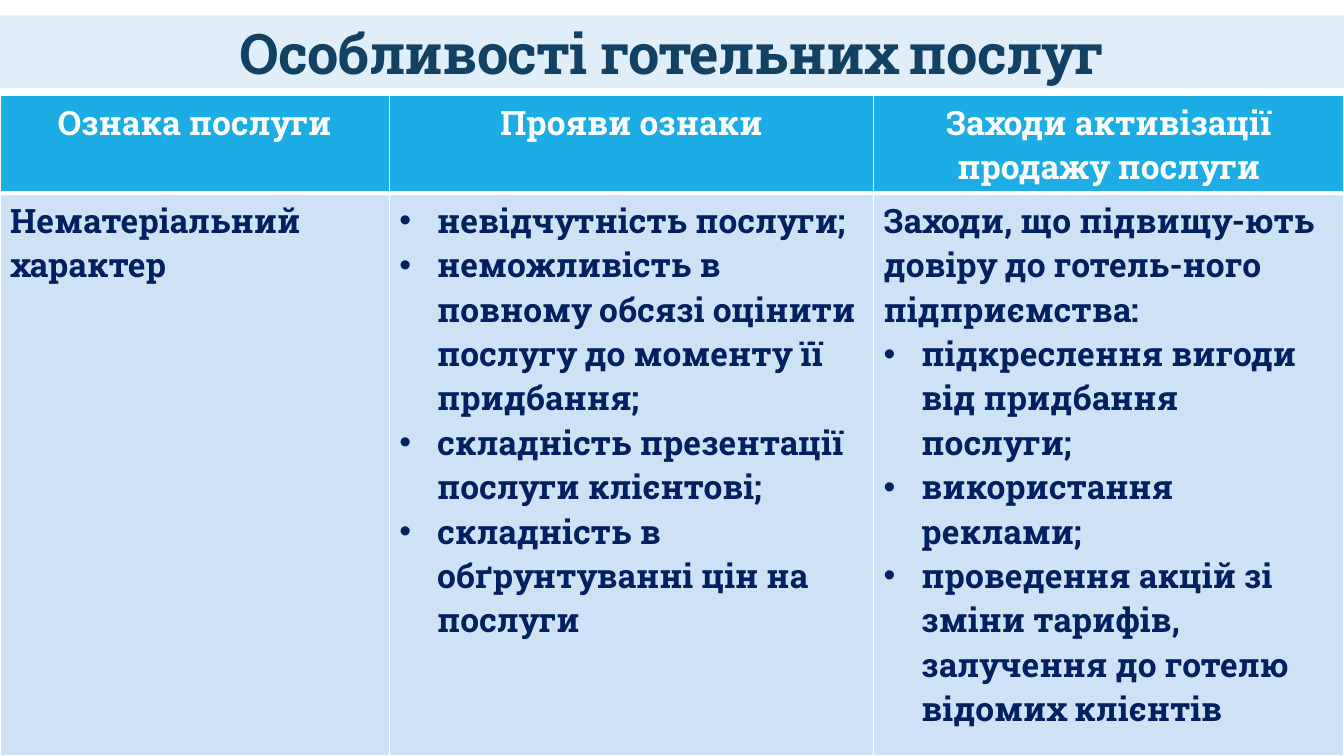
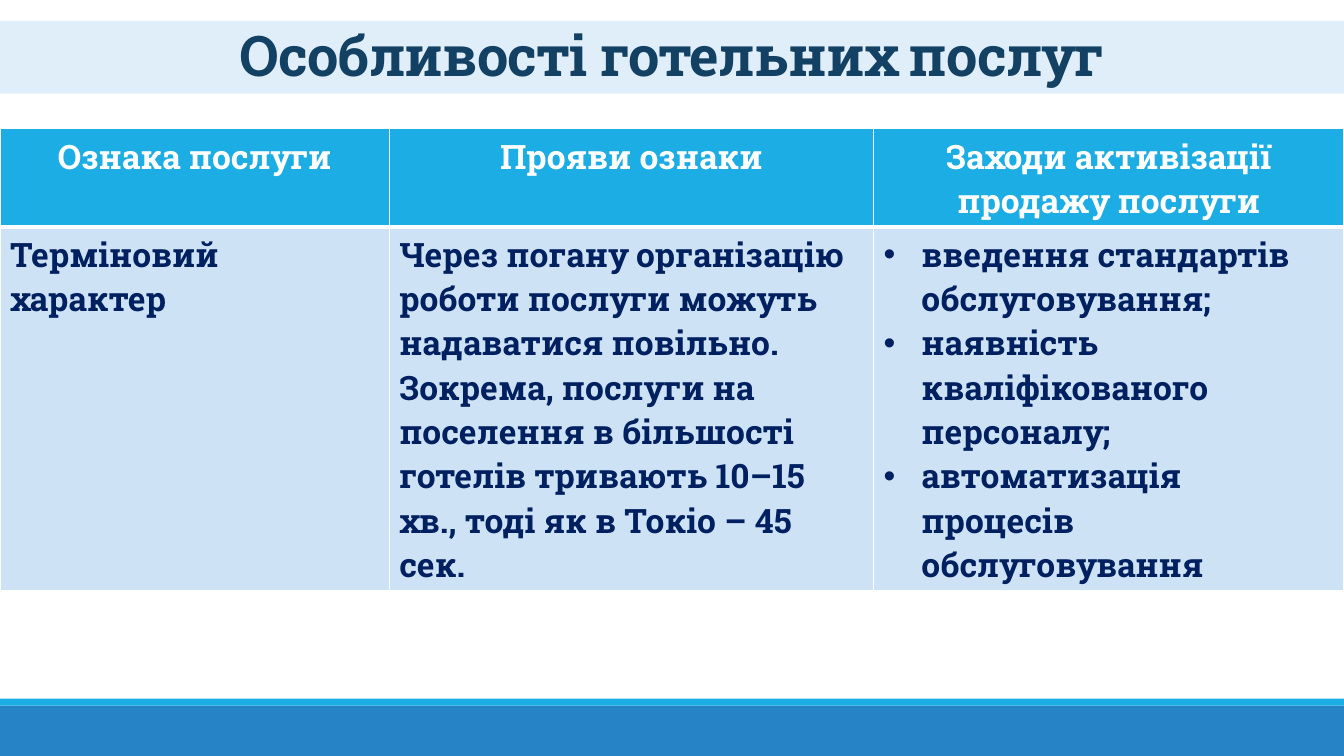
from dataclasses import dataclass

from lxml import etree
from pptx import Presentation
from pptx.dml.color import RGBColor
from pptx.enum import shapes, text
from pptx.oxml import ns
from pptx.util import Pt

WIDTH, HEIGHT = 960, 540


@dataclass(frozen=True)
class Theme:
    font: str = "Roboto Slab"
    title_size: int = 40
    table_size: int = 24
    title: str = "134163"
    band: str = "75B6E5"
    header: str = "1CADE4"
    footer: str = "2683C6"
    body: str = "CDE3F5"
    ink: str = "002060"
    white: str = "FFFFFF"


THEME = Theme()


def sub(parent, tag, **attrs):
    return etree.SubElement(parent, ns.qn(tag), attrs)


def write(p, content, size, color, align=None, bullet=False, line=None, spacing=None):
    """Put one bold run into paragraph p."""
    if align is not None:
        p.alignment = align
    if line:
        p.line_spacing = line
    if bullet:
        pPr = p._p.get_or_add_pPr()
        pPr.set("marL", str(Pt(27)))
        pPr.set("indent", str(-Pt(27)))
        sub(pPr, "a:buFont", typeface="Arial")
        sub(pPr, "a:buChar", char="•")
    r = p.add_run()
    r.text = content
    r.font.name = THEME.font
    r.font.size = Pt(size)
    r.font.bold = True
    r.font.color.rgb = RGBColor.from_string(color)
    if spacing:
        r._r.get_or_add_rPr().set("spc", str(int(spacing * 100)))


def plain(*lines):
    return [(line, False) for line in lines]


def bullets(*lines):
    return [(line, True) for line in lines]


class Deck:
    COLUMNS = (278, 346, 336)
    HEADER_HEIGHT = 70
    HEADINGS = ("Ознака послуги", "Прояви ознаки", "Заходи активізації продажу послуги")

    def __init__(self):
        self.prs = Presentation()
        self.prs.slide_width, self.prs.slide_height = Pt(WIDTH), Pt(HEIGHT)
        self.slide = None

    def new_slide(self):
        self.slide = self.prs.slides.add_slide(self.prs.slide_layouts[6])
        self.bar(504, 36, THEME.footer)
        self.bar(499, 5, THEME.header)

    def bar(self, top, height, color, opacity=None):
        """Draw a rectangle across the whole slide; opacity is in percent."""
        sp = self.slide.shapes.add_shape(
            shapes.MSO_SHAPE.RECTANGLE, 0, Pt(top), Pt(WIDTH), Pt(height))
        sp.shadow.inherit = False
        sp.line.fill.background()
        sp.fill.solid()
        sp.fill.fore_color.rgb = RGBColor.from_string(color)
        if opacity:
            clr = sp._element.spPr.find(".//" + ns.qn("a:srgbClr"))
            sub(clr, "a:alpha", val=str(opacity * 1000))

    def title(self, content, band_top, text_top):
        self.bar(band_top, 52, THEME.band, opacity=22)
        box = self.slide.shapes.add_textbox(Pt(23), Pt(text_top), Pt(WIDTH - 46), Pt(49))
        tf = box.text_frame
        tf.word_wrap = True
        tf.margin_top = tf.margin_bottom = 0
        tf.vertical_anchor = text.MSO_ANCHOR.MIDDLE
        write(tf.paragraphs[0], content, THEME.title_size, THEME.title,
              align=text.PP_ALIGN.CENTER, line=0.85, spacing=-0.5)

    def cell(self, cell, lines, fill, color, align=None, top=1, bottom=1):
        """Fill a table cell; top and bottom are border widths."""
        tcPr = cell._tc.get_or_add_tcPr()
        for side, width in zip("LRTB", (1, 1, top, bottom)):
            ln = sub(tcPr, "a:ln" + side, w=str(Pt(width)))
            sub(sub(ln, "a:solidFill"), "a:srgbClr", val=THEME.white)
        cell.fill.solid()
        cell.fill.fore_color.rgb = RGBColor.from_string(fill)
        tf = cell.text_frame
        for i, (content, bullet) in enumerate(lines):
            p = tf.add_paragraph() if i else tf.paragraphs[0]
            write(p, content, THEME.table_size, color, align=align, bullet=bullet)

    def table(self, top, body_height, body):
        heights = (self.HEADER_HEIGHT, body_height)
        table = self.slide.shapes.add_table(
            2, 3, 0, Pt(top), Pt(WIDTH), Pt(sum(heights))).table
        for row, height in zip(table.rows, heights):
            row.height = Pt(height)
        for i, width in enumerate(self.COLUMNS):
            table.columns[i].width = Pt(width)
            self.cell(table.cell(0, i), plain(self.HEADINGS[i]), THEME.header,
                      THEME.white, align=text.PP_ALIGN.CENTER, bottom=3)
            self.cell(table.cell(1, i), body[i], THEME.body, THEME.ink, top=3)


def main():
    heading = "Особливості готельних послуг"
    deck = Deck()

    deck.new_slide()
    deck.title(heading, band_top=11, text_top=16.5)
    deck.table(68, 402, (
        plain("Нематеріальний характер"),
        bullets("невідчутність послуги;",
                "неможливість в повному обсязі оцінити послугу до моменту її придбання;",
                "складність презентації послуги клієнтові;",
                "складність в обґрунтуванні цін на послуги"),
        plain("Заходи, що підвищу-ють довіру до готель-ного підприємства:")
        + bullets("підкреслення вигоди від придбання послуги;",
                  "використання реклами;",
                  "проведення акцій зі зміни тарифів, залучення до готелю відомих клієнтів"),
    ))

    deck.new_slide()
    deck.title(heading, band_top=15, text_top=18)
    deck.table(92, 260, (
        plain("Терміновий характер"),
        plain("Через погану організацію роботи послуги можуть надаватися повільно.",
              "Зокрема, послуги на поселення в більшості готелів тривають 10–15 хв., "
              "тоді як в Токіо – 45 сек."),
        bullets("введення стандартів обслуговування;",
                "наявність кваліфікованого персоналу;",
                "автоматизація процесів обслуговування"),
    ))

    deck.prs.save("out.pptx")


if __name__ == "__main__":
    main()
